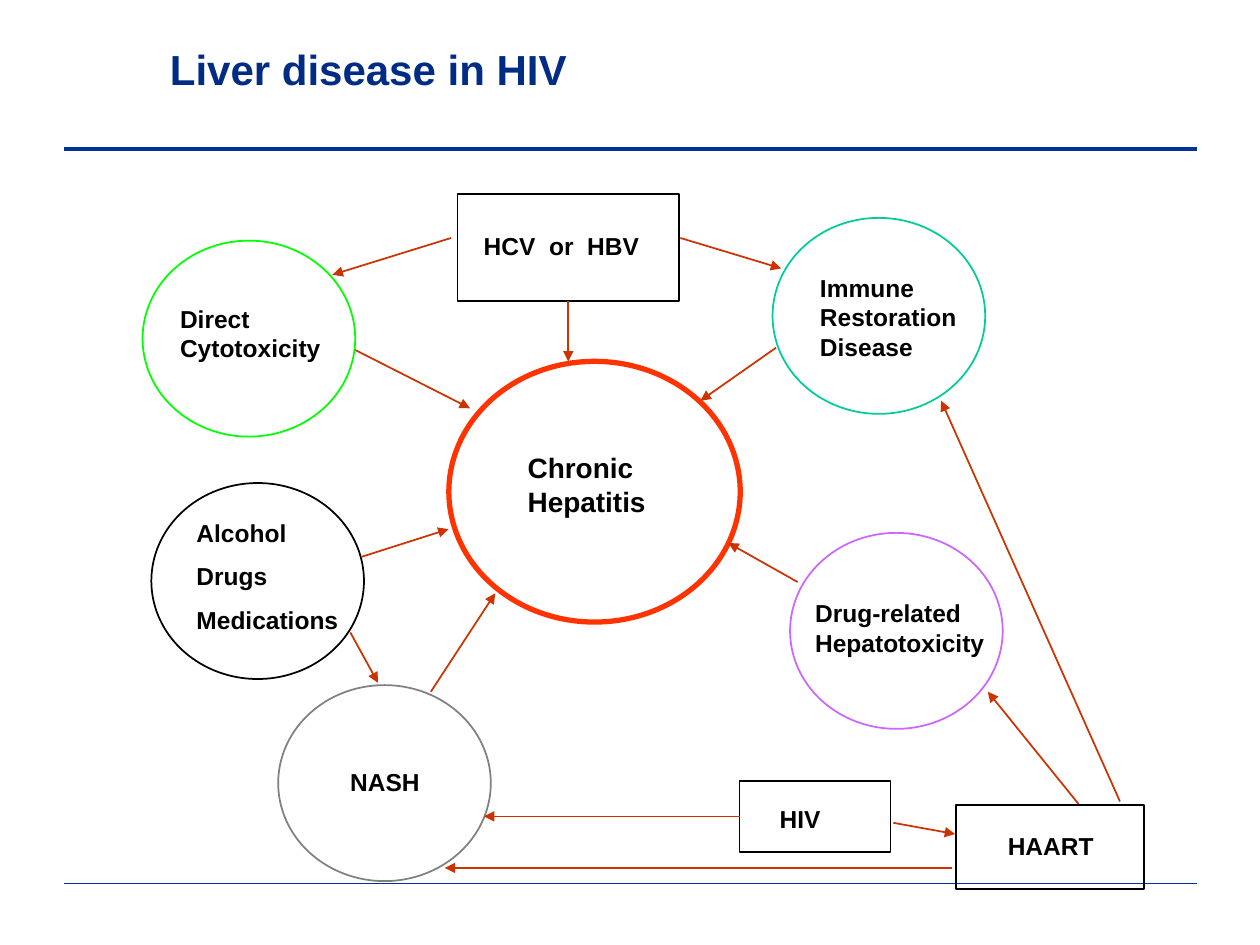
from dataclasses import dataclass

from lxml import etree
from pptx import Presentation
from pptx.dml.color import RGBColor
from pptx.enum.shapes import MSO_CONNECTOR, MSO_SHAPE
from pptx.enum.text import MSO_ANCHOR
from pptx.oxml.ns import qn
from pptx.util import Pt

STRAIGHT = MSO_CONNECTOR.STRAIGHT
OVAL, RECT = MSO_SHAPE.OVAL, MSO_SHAPE.RECTANGLE
TOP, MIDDLE = MSO_ANCHOR.TOP, MSO_ANCHOR.MIDDLE
LEFT_SIDE, BOTTOM_SIDE = 1, 2


@dataclass(frozen=True)
class Theme:
    """Colours, font and type sizes of the slide."""
    font: str = "Arial"
    title: str = "002C84"
    rule: str = "00339A"
    ink: str = "000000"
    arrow: str = "CC3300"
    core: str = "FF3300"
    green: str = "00FF00"
    grey: str = "808080"
    teal: str = "00CC99"
    violet: str = "CC66FF"
    title_size: float = 24
    core_size: float = 16
    label_size: float = 14


THEME = Theme()
CIRCLE = (121.5, 112)

# name: shape, position, size, colour, weight, label, label offset, label size
NODES = {
    "core": (OVAL, (176.5, 96.5), (166.5, 149), THEME.core, 3,
             ["Chronic Hepatitis"], (38, 47.5), (124.5, 46)),
    "direct": (OVAL, (1.5, 27.5), CIRCLE, THEME.green, 1,
               ["Direct Cytotoxicity"], (14.3, 32.5), (102, 41)),
    "nash": (OVAL, (79, 281.5), CIRCLE, THEME.grey, 1,
             ["NASH"], (34, 43.4), (102, 24)),
    "toxins": (OVAL, (6.5, 166), CIRCLE, THEME.ink, 1,
               ["Alcohol", "Drugs", "Medications"], (18.7, 16.3), (102, 74)),
    "immune": (OVAL, (361.5, 14.5), CIRCLE, THEME.teal, 1,
               ["Immune Restoration Disease"], (20, 28), (102, 57.6)),
    "drug": (OVAL, (371.5, 194.5), CIRCLE, THEME.violet, 1,
             ["Drug-related Hepatotoxicity"], (7.2, 33.8), (115, 41)),
    "hiv": (RECT, (342.6, 336.4), (86.4, 40.3), THEME.ink, 1,
            ["HIV"], (15.8, 9.4), (59, 24)),
    "haart": (RECT, (466.5, 350), (107.3, 48.2), THEME.ink, 1,
              ["HAART"], (22.3, 11.5), (77, 24)),
    "virus": (RECT, (181.4, 0.9), (126.7, 61.2), THEME.ink, 1,
              ["HCV  or  HBV"], (7.9, 17.3), (113.8, 24)),
}

FREE_ARROWS = [
    ((177.8, 26), (110, 47)),
    ((123, 90), (188.6, 123.3)),
    ((308.8, 26), (366.4, 43.4)),
    ((363.5, 88.7), (320.3, 119)),
    ((126.6, 208.2), (176.3, 192.4)),
    ((120.2, 251.4), (136, 280.2)),
    ((166.2, 285.3), (203, 229)),
    ((464.3, 386), (174.2, 386)),
    ((536.3, 349.4), (484.5, 285.3)),
    ((560, 348), (457.8, 119)),
    ((375.8, 222.6), (336.2, 200.3)),
    ((430.5, 360.2), (465.8, 366.6)),
]

JOINED_ARROWS = [
    ("virus", BOTTOM_SIDE, (244.75, 96.6)),
    ("hiv", LEFT_SIDE, (196.5, 356.55)),
]


def add_text(page, box, lines, *, size, color, anchor=TOP, gap=8):
    """Write bold paragraphs in a wrapping text box."""
    frame = page.shapes.add_textbox(*map(Pt, box)).text_frame
    frame.word_wrap = True
    frame.vertical_anchor = anchor
    for index, line in enumerate(lines):
        para = frame.add_paragraph() if index else frame.paragraphs[0]
        if index:
            para.space_before = Pt(gap)
        span = para.add_run()
        span.text = line
        span.font.name = THEME.font
        span.font.size = Pt(size)
        span.font.bold = True
        span.font.color.rgb = RGBColor.from_string(color)


def add_line(page, start, end, *, color, weight, arrow=False):
    """Draw a straight line without shadow, with an optional arrowhead."""
    line = page.shapes.add_connector(STRAIGHT, *map(Pt, (*start, *end)))
    line.line.color.rgb = RGBColor.from_string(color)
    line.line.width = Pt(weight)
    if arrow:
        etree.SubElement(line.line._get_or_add_ln(), qn("a:tailEnd"), type="triangle")
    etree.SubElement(line._element.spPr, qn("a:effectLst"))
    return line


def add_node(page, box, kind, color, weight):
    """Draw an unfilled outline."""
    node = page.shapes.add_shape(kind, *map(Pt, box))
    node.shadow.inherit = False
    node.fill.background()
    node.line.color.rgb = RGBColor.from_string(color)
    node.line.width = Pt(weight)
    return node


def build_frame(page, box):
    """Place the title and the two horizontal rules."""
    left, top, width, height = box
    for y, weight in ((top + 72.5, 2.5), (top + height, 0.75)):
        add_line(page, (left, y), (left + width, y), color=THEME.rule, weight=weight)
    add_text(page, (left + 53.3, top, 516, 54), ["Liver disease in HIV"],
             size=THEME.title_size, color=THEME.title, anchor=MIDDLE)


def build_diagram(page, box):
    """Place the causes, their labels and the arrows between them."""
    left, top = box[:2]

    def shift(point):
        """Move a diagram point to its place on the page."""
        return left + point[0], top + point[1]

    nodes = {}
    for name, (kind, spot, extent, color, weight, lines, offset, area) in NODES.items():
        x, y = shift(spot)
        nodes[name] = add_node(page, (x, y, *extent), kind, color, weight)
        size = THEME.core_size if name == "core" else THEME.label_size
        add_text(page, (x + offset[0], y + offset[1], *area), lines,
                 size=size, color=THEME.ink)
    for start, end in FREE_ARROWS:
        add_line(page, shift(start), shift(end), color=THEME.arrow, weight=1, arrow=True)
    for name, side, end in JOINED_ARROWS:
        line = add_line(page, shift(end), shift(end), color=THEME.arrow, weight=1, arrow=True)
        line.begin_connect(nodes[name], side)


def main():
    """Build and save the deck."""
    deck = Presentation()
    deck.slide_width, deck.slide_height = Pt(720), Pt(540)
    page = deck.slides.add_slide(deck.slide_layouts[6])
    build_frame(page, (36.7, 12.5, 647.3, 492.2))
    build_diagram(page, (80, 110, 575, 400))
    deck.save("out.pptx")


if __name__ == "__main__":
    main()
